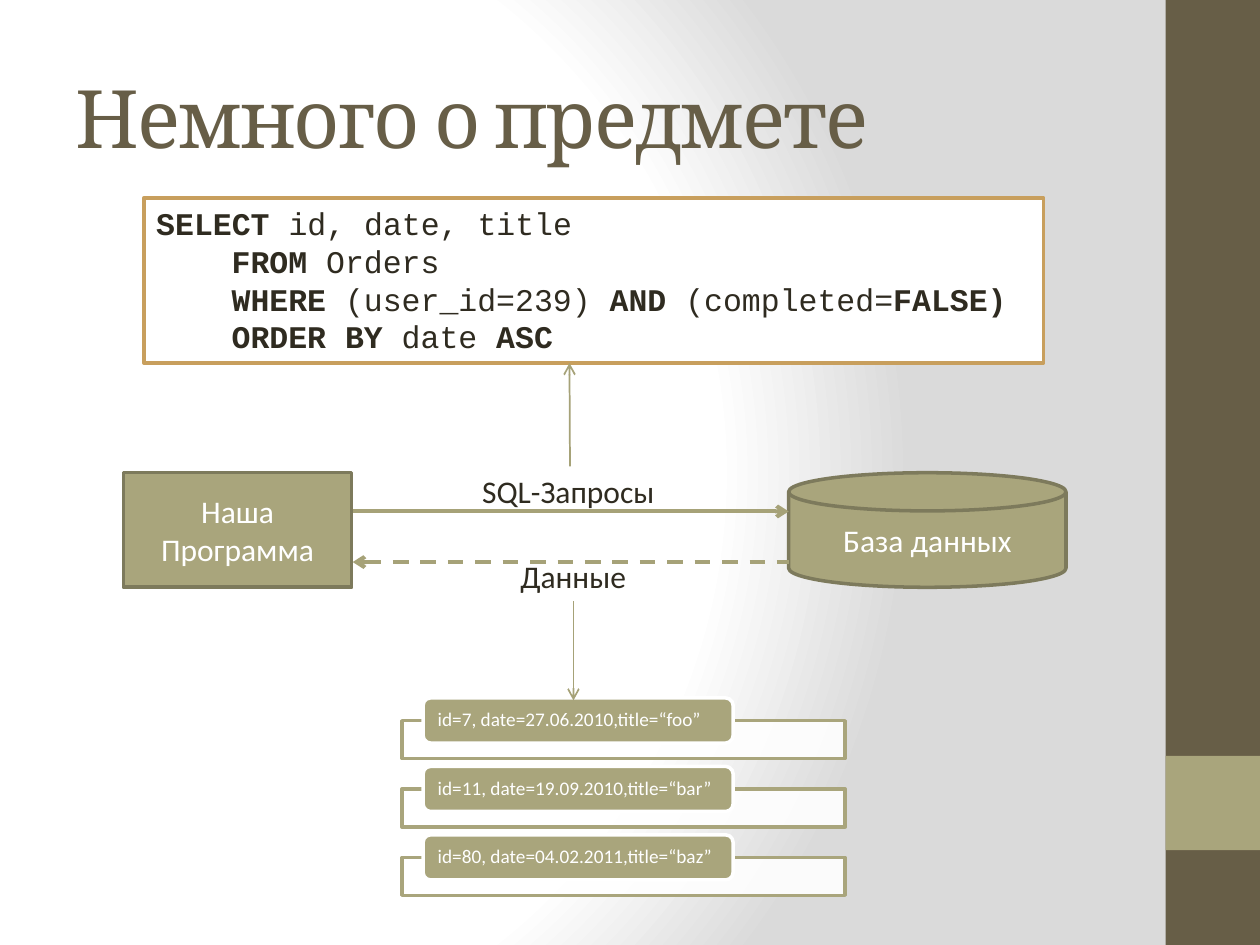
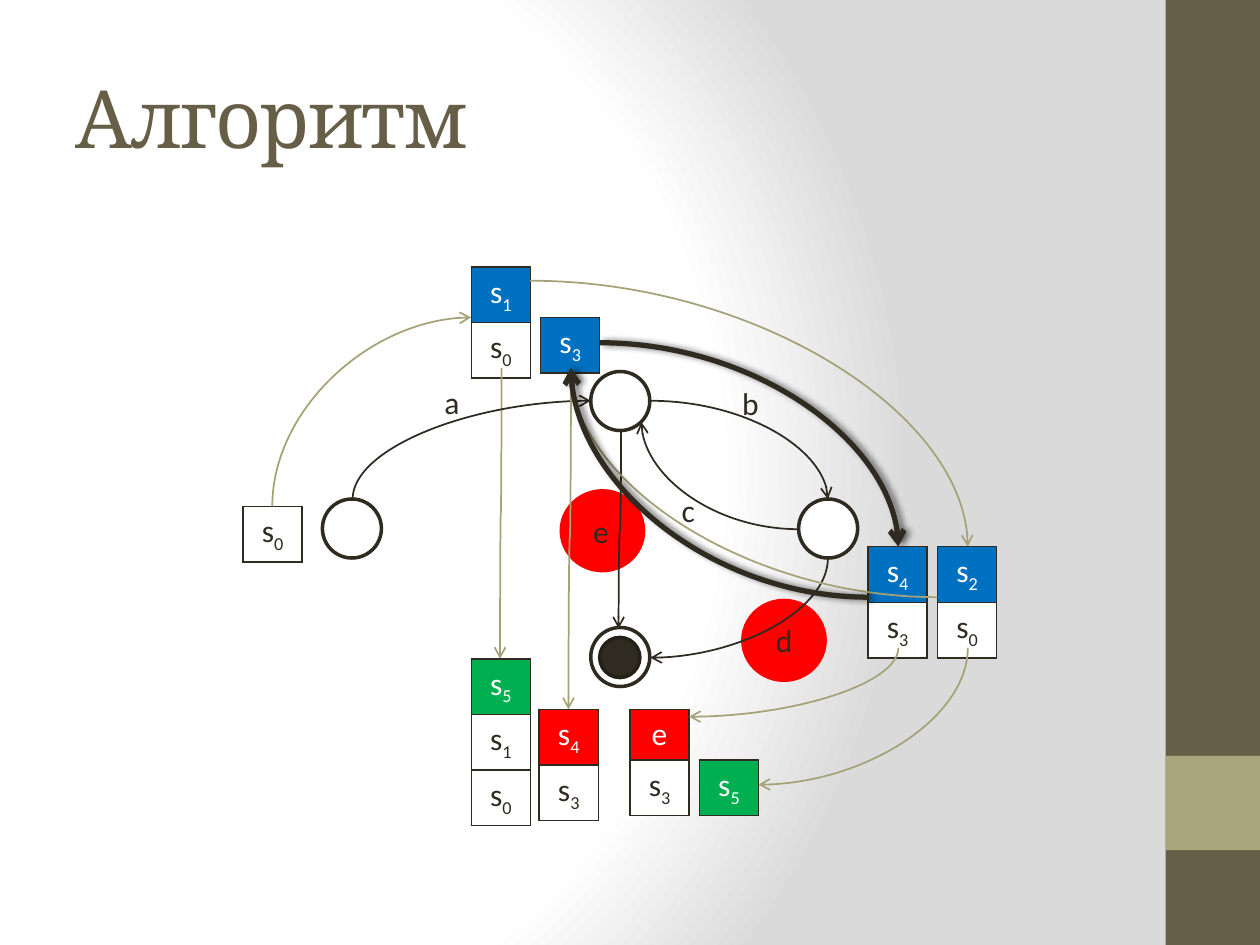
from dataclasses import dataclass

import lxml.etree
import pptx
import pptx.dml.color
import pptx.enum.dml
import pptx.enum.shapes
import pptx.enum.text
import pptx.oxml
import pptx.oxml.ns
import pptx.shapes.autoshape
import pptx.shapes.connector
import pptx.slide
import pptx.text.text
import pptx.util

Cm = pptx.util.Cm
Pt = pptx.util.Pt
SHAPE = pptx.enum.shapes.MSO_SHAPE
CONNECTOR = pptx.enum.shapes.MSO_CONNECTOR
ALIGN = pptx.enum.text.PP_ALIGN
ANCHOR = pptx.enum.text.MSO_ANCHOR
qn = pptx.oxml.ns.qn

BROWN, OLIVE, OLIVE_EDGE, OLIVE_LINE = "675E47", "A9A57C", "7D7A5C", "A6A278"
INK, INK_LINE, INK_EDGE, WHITE, GOLD = "2F2B20", "2E2A1F", "232018", "FFFFFF", "C89F5D"
RED, BLUE, GREEN = "FF0000", "0070C0", "00B050"

LABEL_HEIGHT = 1.02
STATE_SIZE = 1.19
ROW_HEIGHT = 1.02

SQL = """|SELECT| id, date, title
|FROM| Orders
|WHERE| (user_id=239) |AND| (completed=|FALSE)|
|ORDER BY| date |ASC|"""

RECORDS = (
    "id=7, date=27.06.2010,title=“foo”",
    "id=11, date=19.09.2010,title=“bar”",
    "id=80, date=04.02.2011,title=“baz”",
)

BACKGROUND = """<a:gradFill xmlns:a="http://schemas.openxmlformats.org/drawingml/2006/main" rotWithShape="1">
<a:gsLst><a:gs pos="0"><a:srgbClr val="FFFFFF"/></a:gs><a:gs pos="75000"><a:srgbClr val="FFFFFF"/></a:gs>
<a:gs pos="100000"><a:srgbClr val="DADADA"/></a:gs></a:gsLst>
<a:path path="circle"><a:fillToRect l="20000" t="50000" r="100000" b="50000"/></a:path></a:gradFill>"""


@dataclass(frozen=True)
class Label:
    text: str
    left: float
    top: float
    width: float


@dataclass(frozen=True)
class Stack:
    left: float
    top: float
    items: tuple[str, ...]
    top_fill: str = WHITE


@dataclass(frozen=True)
class Arrow:
    start: tuple[float, float]
    end: tuple[float, float]
    color: str = OLIVE_LINE
    width: float = 1
    turned: bool = False
    geometry: str = "curvedConnector2"
    shadow: bool = False


SPOTS = ((11.28, 9.86), (14.94, 12.07))
STATES = ((6.5, 10.06), (11.91, 7.49), (16.1, 10.06), (11.91, 12.65))
TRANSITIONS = (
    Arrow((7.11, 10.06), (11.91, 8.08), INK_LINE, turned=True),
    Arrow((13.11, 8.08), (16.69, 10.06), INK_LINE),
    Arrow((16.1, 10.67), (12.93, 8.51), INK_LINE),
    Arrow((16.69, 11.25), (13.11, 13.26), INK_LINE, turned=True),
    Arrow((12.52, 8.71), (12.47, 12.67), INK_LINE, turned=True, geometry="curvedConnector3"),
)
SYMBOLS = (
    Label("a", 8.71, 7.59, 0.81),
    Label("b", 14.71, 7.62, 0.86),
    Label("c", 13.49, 9.78, 0.79),
    Label("e", 11.71, 10.19, 0.86),
    Label("d", 15.39, 12.4, 0.86),
)
FIRST_STACK = Stack(9.5, 5.38, ("s|1", "s|0"), BLUE)
LAST_STACK = Stack(10.9, 6.4, ("s|3",), BLUE)
STACKS = (
    Stack(18.9, 11.02, ("s|2", "s|0"), BLUE),
    Stack(4.9, 10.21, ("s|0",)),
    Stack(17.5, 11.02, ("s|4", "s|3"), BLUE),
    Stack(14.1, 15.32, ("s|5",), GREEN),
    Stack(12.7, 14.3, ("e", "s|3"), RED),
    Stack(9.5, 13.28, ("s|5", "s|1", "s|0"), GREEN),
    Stack(10.87, 14.3, ("s|4", "s|3"), RED),
)
FIRST_STACK_ARROWS = (
    Arrow((10.11, 7.42), (10.08, 13.28), turned=True, geometry="curvedConnector3"),
    Arrow((10.69, 5.66), (19.51, 11.02)),
)
CYCLE = (((12.09, 6.91), (18.11, 11.02)), ((17.5, 12.04), (11.51, 7.42)))
STACK_ARROWS = (
    Arrow((18.9, 12.04), (11.51, 7.42)),
    Arrow((5.49, 10.21), (9.5, 6.4), turned=True),
    Arrow((18.11, 13.06), (13.89, 14.45), turned=True),
    Arrow((19.51, 13.06), (15.29, 15.82), turned=True),
    Arrow((11.51, 7.42), (11.46, 14.3), turned=True, geometry="curvedConnector3"),
    *(Arrow(start, end) for start, end in CYCLE),
)


def rgb(color: str) -> pptx.dml.color.RGBColor:
    return pptx.dml.color.RGBColor.from_string(color)


def add_node(parent: lxml.etree._Element, tag: str, **attributes: str) -> lxml.etree._Element:
    return lxml.etree.SubElement(parent, qn(tag), attributes)


def write_text(frame: pptx.text.text.TextFrame, text: str, *, size: float = 18, font: str = "Calibri",
               color: str = INK, align: ALIGN = ALIGN.LEFT, subscript: bool = False, tracking: int = 0,
               later_indent: float = 0, line_spacing: float = 1) -> None:
    for number, line in enumerate(text.split("\n")):
        para = frame.add_paragraph() if number else frame.paragraphs[0]
        para.alignment = align
        para.line_spacing = line_spacing
        if number and later_indent:
            para._p.get_or_add_pPr().set("marL", str(Cm(later_indent)))
        for index, piece in enumerate(line.split("|")):
            if not piece:
                continue
            marked = index % 2 == 1
            span = para.add_run()
            span.text = piece
            span.font.size, span.font.name = Pt(size), font
            span.font.color.rgb = rgb(color)
            span.font.bold = marked and not subscript
            properties = span._r.get_or_add_rPr()
            if marked and subscript:
                properties.set("baseline", "-25000")
            if tracking:
                properties.set("spc", str(tracking))


def add_box(page: pptx.slide.Slide, kind: SHAPE, left: float, top: float, width: float, height: float,
            fill: str, edge: str | None = None) -> pptx.shapes.autoshape.Shape:
    box = page.shapes.add_shape(kind, Cm(left), Cm(top), Cm(width), Cm(height))
    box.shadow.inherit = False
    box.fill.solid()
    box.fill.fore_color.rgb = rgb(fill)
    if edge:
        box.line.color.rgb = rgb(edge)
        box.line.width = Pt(2)
    else:
        box.line.fill.background()
    box.text_frame.word_wrap = True
    return box


def add_label(page: pptx.slide.Slide, label: Label) -> pptx.shapes.autoshape.Shape:
    box = page.shapes.add_textbox(Cm(label.left), Cm(label.top), Cm(label.width), Cm(LABEL_HEIGHT))
    box.text_frame.word_wrap = False
    box.text_frame.auto_size = pptx.enum.text.MSO_AUTO_SIZE.SHAPE_TO_FIT_TEXT
    write_text(box.text_frame, label.text)
    return box


def add_arrow(page: pptx.slide.Slide, arrow: Arrow, kind: CONNECTOR = CONNECTOR.CURVE,
              arrowhead: str = "a:tailEnd", dashed: bool = False) -> pptx.shapes.connector.Connector:
    (x1, y1), (x2, y2) = arrow.start, arrow.end
    if arrow.turned:
        x, y, dx, dy = (x1 + x2) / 2, (y1 + y2) / 2, x2 - x1, y2 - y1
        x1, y1, x2, y2 = x - dy / 2, y + dx / 2, x + dy / 2, y - dx / 2
    connector = page.shapes.add_connector(kind, Cm(x1), Cm(y1), Cm(x2), Cm(y2))
    connector.line.color.rgb = rgb(arrow.color)
    connector.line.width = Pt(arrow.width)
    if dashed:
        connector.line.dash_style = pptx.enum.dml.MSO_LINE.DASH
    properties = connector.element.spPr
    if arrow.turned:
        properties.find(qn("a:xfrm")).set("rot", "5400000")
    if kind == CONNECTOR.CURVE:
        properties.find(qn("a:prstGeom")).set("prst", arrow.geometry)
    add_node(properties.find(qn("a:ln")), arrowhead, type="arrow")
    effects = add_node(properties, "a:effectLst")
    if arrow.shadow:
        shadow = add_node(effects, "a:outerShdw", blurRad=str(Pt(4)), dist=str(Pt(2)), dir="0")
        add_node(add_node(shadow, "a:srgbClr", val="000000"), "a:alpha", val="60000")
    return connector


def add_stack(page: pptx.slide.Slide, stack: Stack) -> None:
    count = len(stack.items)
    table = page.shapes.add_table(count, 1, Cm(stack.left), Cm(stack.top),
                                  Cm(STATE_SIZE), Cm(ROW_HEIGHT * count)).table
    table.first_row = table.horz_banding = False
    for row, item in enumerate(stack.items):
        cell = table.cell(row, 0)
        fill = WHITE if row else stack.top_fill
        write_text(cell.text_frame, item, color=INK if fill == WHITE else WHITE,
                   align=ALIGN.CENTER, subscript=True)
        properties = cell._tc.get_or_add_tcPr()
        for side in ("a:lnL", "a:lnR", "a:lnT", "a:lnB"):
            border = add_node(properties, side, w=str(Pt(1)))
            add_node(add_node(border, "a:solidFill"), "a:srgbClr", val=INK)
        cell.fill.solid()
        cell.fill.fore_color.rgb = rgb(fill)


def set_background(deck: pptx.presentation.Presentation) -> None:
    master = deck.slide_master
    master.background.fill.solid()
    solid = master.element.find(".//" + qn("p:bgPr")).find(qn("a:solidFill"))
    solid.getparent().replace(solid, pptx.oxml.parse_xml(BACKGROUND))


def add_page(deck: pptx.presentation.Presentation, title: str) -> pptx.slide.Slide:
    page = deck.slides.add_slide(deck.slide_layouts[6])
    add_box(page, SHAPE.RECTANGLE, 23.5, 0, 1.9, 19.05, BROWN)
    add_box(page, SHAPE.RECTANGLE, 23.5, 15.24, 1.9, 1.9, OLIVE)
    box = page.shapes.add_textbox(Cm(1.27), Cm(0.76), Cm(21.16), Cm(3.18))
    box.text_frame.word_wrap = True
    box.text_frame.vertical_anchor = ANCHOR.MIDDLE
    write_text(box.text_frame, title, size=46, font="Cambria", color=BROWN, tracking=-100)
    return page


def build_subject(deck: pptx.presentation.Presentation) -> None:
    page = add_page(deck, "Немного о предмете")
    for kind, left, width, text in ((SHAPE.RECTANGLE, 2.49, 4.6, "Наша\nПрограмма"),
                                    (SHAPE.FLOWCHART_MAGNETIC_DISK, 15.9, 5.59, "База данных")):
        box = add_box(page, kind, left, 9.53, width, 2.31, OLIVE, OLIVE_EDGE)
        box.text_frame.vertical_anchor = ANCHOR.MIDDLE
        write_text(box.text_frame, text, color=WHITE, align=ALIGN.CENTER)
    for y, arrowhead, dashed in ((10.31, "a:tailEnd", False), (11.33, "a:headEnd", True)):
        add_arrow(page, Arrow((7.11, y), (15.9, y), width=2.25), CONNECTOR.STRAIGHT, arrowhead, dashed)
    queries = add_label(page, Label("SQL-Запросы", 9.47, 9.4, 4.04))
    add_label(page, Label("Данные", 10.24, 11.1, 2.67))

    statement = add_box(page, SHAPE.RECTANGLE, 2.9, 3.99, 18.14, 3.33, WHITE, GOLD)
    statement.text_frame.vertical_anchor = ANCHOR.TOP
    write_text(statement.text_frame, SQL, font="Courier New", later_indent=1.52)
    query_arrow = add_arrow(page, Arrow((11.48, 9.4), (11.48, 7.32)), CONNECTOR.STRAIGHT)
    query_arrow.begin_connect(queries, 0)

    for index, record in enumerate(RECORDS):
        shift = 1.38 * index
        frame = add_box(page, SHAPE.RECTANGLE, 8.1, 14.53 + shift, 8.94, 0.76, WHITE, OLIVE)
        color = frame.element.spPr.find(qn("a:solidFill")).find(qn("a:srgbClr"))
        add_node(color, "a:alpha", val="90000")
        tag = add_box(page, SHAPE.ROUNDED_RECTANGLE, 8.53, 14.07 + shift, 6.25, 0.91, OLIVE, WHITE)
        text_frame = tag.text_frame
        text_frame.vertical_anchor = ANCHOR.MIDDLE
        text_frame.margin_left = text_frame.margin_right = Cm(0.25)
        text_frame.margin_top = text_frame.margin_bottom = Cm(0)
        write_text(text_frame, record, size=11, color=WHITE, line_spacing=0.9)
    add_arrow(page, Arrow((11.56, 12.12), (11.56, 14.12), turned=True), CONNECTOR.ELBOW)


def build_algorithm(deck: pptx.presentation.Presentation) -> None:
    page = add_page(deck, "Алгоритм")
    for left, top in SPOTS:
        add_box(page, SHAPE.OVAL, left, top, 1.73, 1.68, RED)
    add_stack(page, FIRST_STACK)
    for arrow in FIRST_STACK_ARROWS:
        add_arrow(page, arrow)
    for left, top in STATES:
        add_box(page, SHAPE.OVAL, left, top, STATE_SIZE, STATE_SIZE, WHITE, INK)
    add_box(page, SHAPE.OVAL, 12.09, 12.85, 0.81, 0.81, INK, INK_EDGE)
    for arrow in TRANSITIONS:
        add_arrow(page, arrow)
    for symbol in SYMBOLS:
        add_label(page, symbol)
    for stack in STACKS:
        add_stack(page, stack)
    for arrow in STACK_ARROWS:
        add_arrow(page, arrow)
    add_stack(page, LAST_STACK)
    for start, end in CYCLE:
        add_arrow(page, Arrow(start, end, INK, 3, shadow=True))


def main() -> None:
    deck = pptx.Presentation()
    deck.slide_width, deck.slide_height = Cm(25.4), Cm(19.05)
    set_background(deck)
    build_subject(deck)
    build_algorithm(deck)
    deck.save("out.pptx")


if __name__ == "__main__":
    main()
